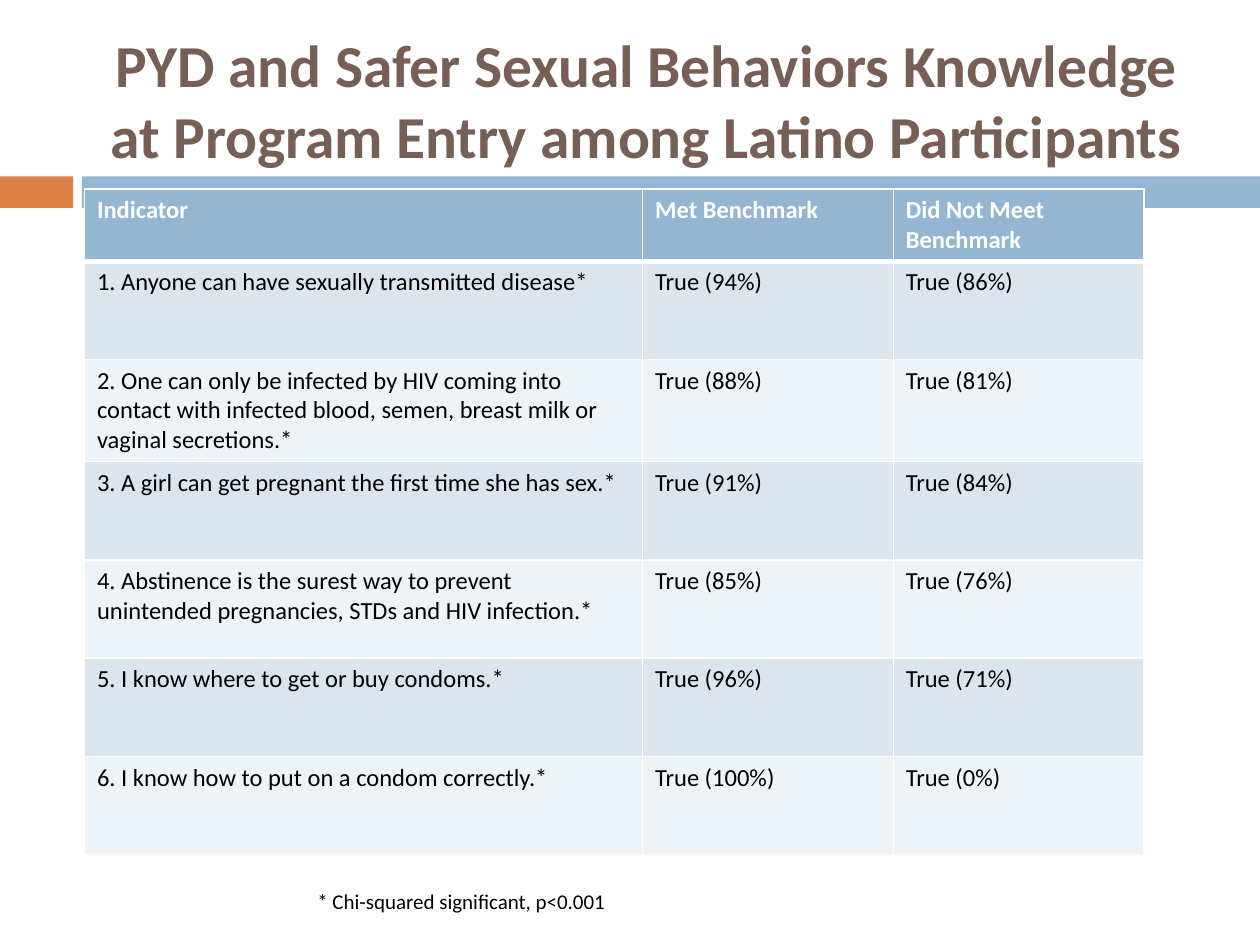
from lxml.etree import SubElement
from pptx import Presentation
from pptx.dml.color import RGBColor
from pptx.enum.shapes import MSO_SHAPE
from pptx.enum.text import MSO_ANCHOR, MSO_AUTO_SIZE, PP_ALIGN
from pptx.oxml.ns import qn
from pptx.util import Inches, Pt

BLUE, ORANGE, BROWN = "94B6D2", "DD8047", "775F55"
WHITE, BLACK = "FFFFFF", "000000"
BANDS = ("DCE5EE", "EEF3F7")
COLUMN_WIDTHS = (4.43, 1.99, 1.99)
HEADER_HEIGHT, ROW_HEIGHT = 0.57, 0.78
ROWS = [
    ("Indicator", "Met Benchmark", "Did Not Meet Benchmark"),
    ("1. Anyone can have sexually transmitted disease*", "True (94%)", "True (86%)"),
    ("2. One can only be infected by HIV coming into contact with infected blood, "
     "semen, breast milk or vaginal secretions.*", "True (88%)", "True (81%)"),
    ("3. A girl can get pregnant the first time she has sex.*", "True (91%)", "True (84%)"),
    ("4. Abstinence is the surest way to prevent unintended pregnancies, STDs and "
     "HIV infection.*", "True (85%)", "True (76%)"),
    ("5. I know where to get or buy condoms.*", "True (96%)", "True (71%)"),
    ("6. I know how to put on a condom correctly.*", "True (100%)", "True (0%)"),
]


def color(value):
    """Turn a hex string into a color."""
    return RGBColor.from_string(value)


class SlideBuilder:
    """Hold the text style and the current slide."""

    def __init__(self, slide, font_name="Calibri"):
        """Keep the slide and the font name."""
        self.slide = slide
        self.font_name = font_name

    def fill_text(self, frame, text, size, text_color, bold=False, alignment=PP_ALIGN.LEFT):
        """Fill a text frame with one formatted paragraph."""
        frame.text = text
        paragraph = frame.paragraphs[0]
        paragraph.alignment = alignment
        font = paragraph.runs[0].font
        formats = {"name": self.font_name, "size": Pt(size), "bold": bold}
        for name, value in formats.items():
            setattr(font, name, value)
        font.color.rgb = color(text_color)

    def title(self, text, left, top, width, height):
        """Place and format the title placeholder."""
        shape = self.slide.shapes.title
        position = {"left": left, "top": top, "width": width, "height": height}
        for name, value in position.items():
            setattr(shape, name, Inches(value))
        frame = shape.text_frame
        formats = {"word_wrap": True, "auto_size": MSO_AUTO_SIZE.NONE,
                   "vertical_anchor": MSO_ANCHOR.MIDDLE}
        for name, value in formats.items():
            setattr(frame, name, value)
        self.fill_text(frame, text, 34, BROWN, True, PP_ALIGN.CENTER)

    def bar(self, left, top, width, height, fill):
        """Add a plain filled rectangle."""
        shape = self.slide.shapes.add_shape(
            MSO_SHAPE.RECTANGLE, *map(Inches, (left, top, width, height)))
        shape.shadow.inherit = False
        shape.fill.solid()
        shape.fill.fore_color.rgb = color(fill)
        shape.line.fill.background()

    def text(self, text, left, top, width, height, size):
        """Add a wrapped text box."""
        shape = self.slide.shapes.add_textbox(*map(Inches, (left, top, width, height)))
        frame = shape.text_frame
        frame.word_wrap = True
        frame.auto_size = MSO_AUTO_SIZE.SHAPE_TO_FIT_TEXT
        self.fill_text(frame, text, size, BLACK)

    def borders(self, cell, widths):
        """Draw white cell borders of the given widths."""
        properties = cell._tc.get_or_add_tcPr()
        for side, width in widths.items():
            line = SubElement(properties, qn(f"a:ln{side}"), w=str(Pt(width)))
            fill = SubElement(line, qn("a:solidFill"))
            SubElement(fill, qn("a:srgbClr"), val=WHITE)

    def table(self, rows, left, top):
        """Add the banded table with a header row."""
        heights = [HEADER_HEIGHT] + [ROW_HEIGHT] * (len(rows) - 1)
        size = (sum(COLUMN_WIDTHS), sum(heights))
        table = self.slide.shapes.add_table(
            len(rows), len(COLUMN_WIDTHS), *map(Inches, (left, top, *size))).table
        for column, width in zip(table.columns, COLUMN_WIDTHS):
            column.width = Inches(width)
        for index, (row, height, texts) in enumerate(zip(table.rows, heights, rows)):
            row.height = Inches(height)
            header = index == 0
            fill = BLUE if header else BANDS[(index - 1) % 2]
            widths = {"L": 1, "R": 1, "T": 3 if index == 1 else 1, "B": 3 if header else 1}
            for cell, text in zip(row.cells, texts):
                self.borders(cell, widths)
                cell.fill.solid()
                cell.fill.fore_color.rgb = color(fill)
                self.fill_text(cell.text_frame, text, 14, WHITE if header else BLACK, header)


def main():
    """Build and save the slide."""
    presentation = Presentation()
    presentation.slide_width = Inches(10)
    presentation.slide_height = Inches(7.5)
    builder = SlideBuilder(presentation.slides.add_slide(presentation.slide_layouts[5]))
    builder.bar(0, 1.4, 0.58, 0.25, ORANGE)
    builder.bar(0.65, 1.4, 9.35, 0.25, BLUE)
    builder.title("PYD and Safer Sexual Behaviors Knowledge at Program Entry "
                  "among Latino Participants", 0.67, 0.25, 8.92, 1.08)
    builder.table(ROWS, 0.67, 1.5)
    builder.text("* Chi-squared significant, p<0.001", 2.42, 7, 6.42, 0.3, 12)
    presentation.save("out.pptx")


if __name__ == "__main__":
    main()
